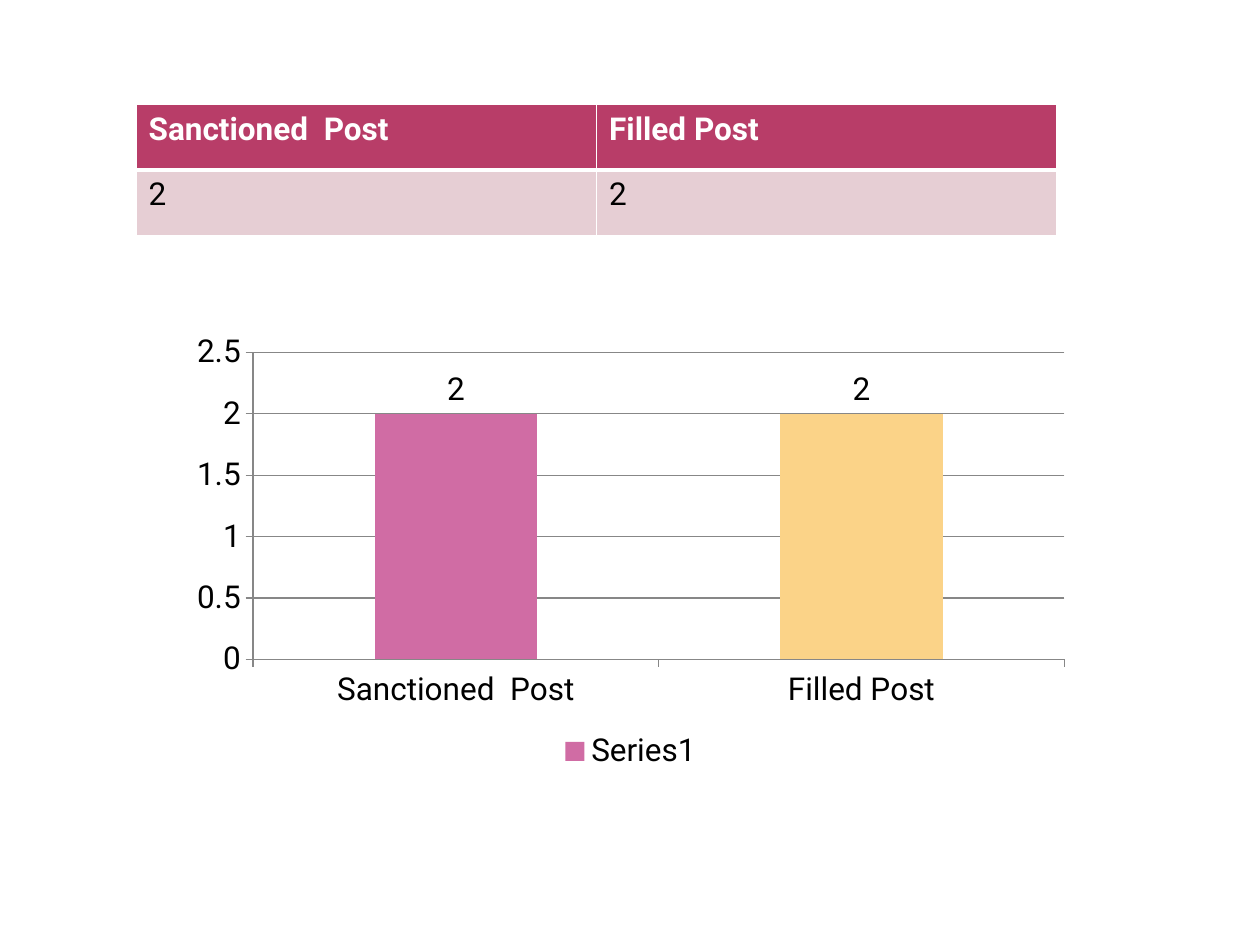
from lxml.etree import SubElement
from pptx import Presentation
from pptx.chart.data import CategoryChartData
from pptx.dml.color import RGBColor
from pptx.enum.chart import XL_CHART_TYPE, XL_LABEL_POSITION, XL_LEGEND_POSITION, XL_TICK_MARK
from pptx.oxml.ns import qn
from pptx.util import Inches, Pt

FONT = "Roboto"
HEADS = ("Sanctioned  Post", "Filled Post")
POSTS = (2, 2)


def paint(color, tint):
    color.rgb = RGBColor.from_string(tint)


def fill(part, tint):
    part.fill.solid()
    paint(part.fill.fore_color, tint)


def style(font, tint, bold=False):
    font.name, font.size, font.bold = FONT, Pt(18), bold
    paint(font.color, tint)


def edge(cell, side, width):
    line = SubElement(cell._tc.get_or_add_tcPr(), qn(f"a:ln{side}"), w=str(Pt(width)))
    solid = SubElement(line, qn("a:solidFill"))
    SubElement(solid, qn("a:srgbClr"), val="FFFFFF")


def add_posts(slide, left, top, width, height):
    rows = (HEADS, POSTS)
    looks = (("B83D68", "FFFFFF", True, 1, 3), ("E6CED4", "000000", False, 3, 1))
    table = slide.shapes.add_table(len(rows), len(HEADS), left, top, width, height).table
    for r, (row, look) in enumerate(zip(rows, looks)):
        back, ink, bold, above, below = look
        for c, value in enumerate(row):
            cell = table.cell(r, c)
            cell.text = str(value)
            style(cell.text_frame.paragraphs[0].font, ink, bold)
            for side, size in zip("LRTB", (1, 1, above, below)):
                edge(cell, side, size)
            fill(cell, back)


def add_bars(slide, left, top, width, height):
    data = CategoryChartData()
    data.categories = HEADS
    data.add_series("Series1", POSTS)
    chart = slide.shapes.add_chart(
        XL_CHART_TYPE.COLUMN_CLUSTERED, left, top, width, height, data).chart
    style(chart.font, "000000")
    chart.has_title = False
    chart.has_legend = True
    chart.legend.position = XL_LEGEND_POSITION.BOTTOM
    chart.legend.include_in_layout = False
    scale = chart.value_axis
    scale.minimum_scale, scale.maximum_scale, scale.major_unit = 0, 2.5, 0.5
    scale.has_major_gridlines = True
    for axis in (chart.category_axis, scale):
        axis.major_tick_mark = XL_TICK_MARK.OUTSIDE
        paint(axis.format.line.color, "878787")
    paint(scale.major_gridlines.format.line.color, "878787")
    plot = chart.plots[0]
    plot.gap_width = 150
    plot.vary_by_categories = False
    bars = plot.series[0]
    fill(bars.format, "D06CA4")
    fill(bars.points[1].format, "FBD388")
    labels = bars.data_labels
    labels.show_value = True
    labels.position = XL_LABEL_POSITION.OUTSIDE_END
    style(labels.font, "000000")


def main():
    deck = Presentation()
    deck.slide_width, deck.slide_height = Inches(10), Inches(7.5)
    slide = deck.slides.add_slide(deck.slide_layouts[6])
    add_posts(slide, Inches(1.08), Inches(0.83), Inches(7.31), Inches(1.04))
    add_bars(slide, Inches(1.42), Inches(2.58), Inches(7.17), Inches(3.58))
    deck.save("out.pptx")


if __name__ == "__main__":
    main()
